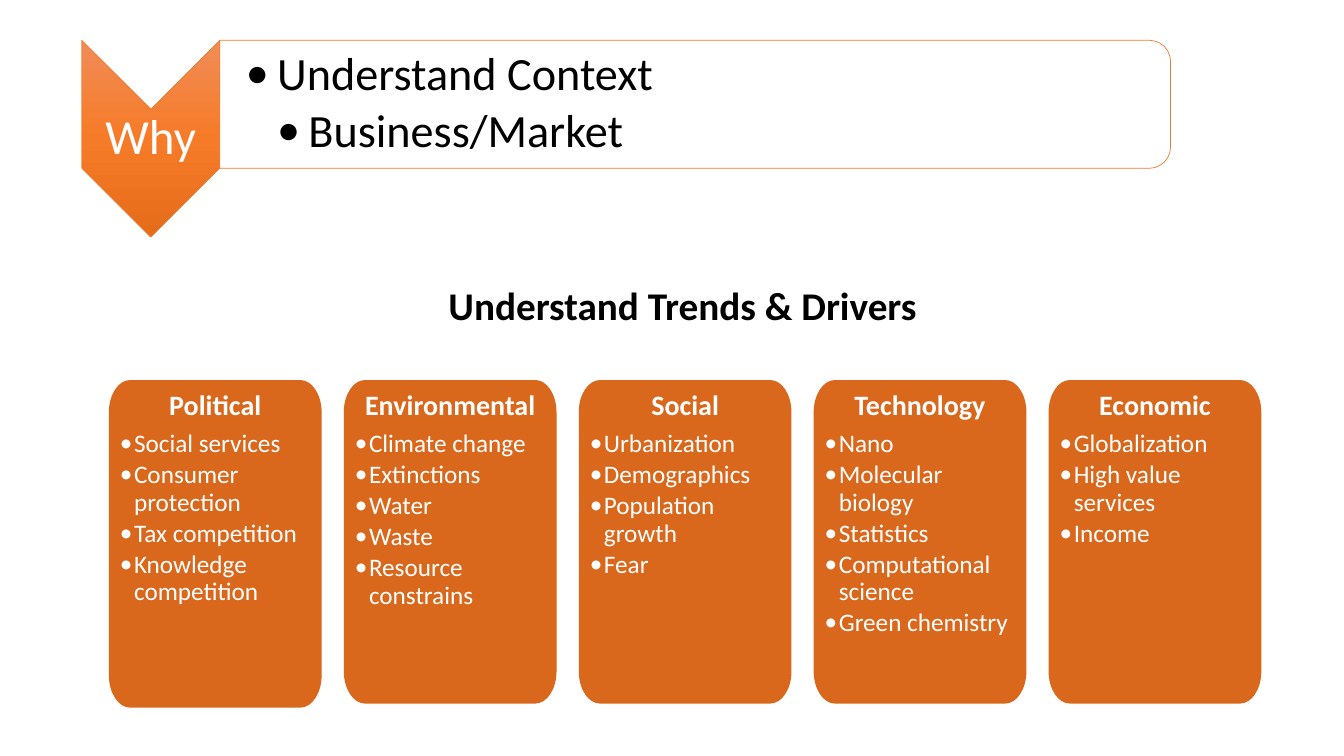
import pptx
import pptx.dml.color
import pptx.enum.shapes
import pptx.enum.text
import pptx.util
from lxml import etree
from pptx.oxml.ns import qn

STAGE = "Why"
CONTEXT = [("Understand Context", 0.31), ("Business/Market", 0.62)]
HEADLINE = "Understand Trends & Drivers"
DRIVERS = {
    "Political": ["Social services", "Consumer protection", "Tax competition",
                  "Knowledge competition"],
    "Environmental": ["Climate change", "Extinctions", "Water", "Waste",
                      "Resource constrains"],
    "Social": ["Urbanization", "Demographics", "Population growth", "Fear"],
    "Technology": ["Nano", "Molecular biology", "Statistics",
                   "Computational science", "Green chemistry"],
    "Economic": ["Globalization", "High value services", "Income"],
}
CHEVRON_STOPS = [(0, "F18C57"), (50, "F67B28"), (100, "E56C19")]
ORANGE, CARD, WHITE, BLACK = "ED7D31", "D9681C", "FFFFFF", "000000"

CARD_LEFT, CARD_TOP, CARD_WIDTH, CARD_STEP = 1.08, 3.77, 2.11, 2.33
CARD_HEIGHT, FIRST_CARD_HEIGHT = 3.21, 3.25
CORNER_X, CORNER_Y, ROUNDNESS = 0.21, 0.32, 0.55

Inches = pptx.util.Inches
Pt = pptx.util.Pt
Shape = pptx.enum.shapes.MSO_SHAPE
Align = pptx.enum.text.PP_ALIGN
Anchor = pptx.enum.text.MSO_ANCHOR


def paint(target, color):
    if hasattr(target, "solid"):
        target.solid()
        target = target.fore_color
    else:
        target = target.color
    target.rgb = pptx.dml.color.RGBColor.from_string(color)


def write(frame, text, size, color, bold=False, align=Align.LEFT, spacing=0.9,
          after=0.15, indent=0, hang=0):
    paragraph = frame.paragraphs[0]
    if paragraph.runs:
        paragraph = frame.add_paragraph()
    paragraph.alignment = align
    paragraph.line_spacing = spacing
    paragraph.space_after = Pt(round(size * after, 1))
    if hang:
        properties = paragraph._p.get_or_add_pPr()
        properties.set("marL", str(Inches(indent)))
        properties.set("indent", str(-Inches(hang)))
        etree.SubElement(properties, qn("a:buFont"), typeface="Calibri")
        etree.SubElement(properties, qn("a:buChar"), char="•")
    run = paragraph.add_run()
    run.text = text
    run.font.name = "Calibri"
    run.font.size = Pt(size)
    run.font.bold = bold
    paint(run.font, color)


def prepare(frame, insets, anchor=Anchor.TOP, wrap=True):
    frame.word_wrap = wrap
    frame.vertical_anchor = anchor
    (frame.margin_left, frame.margin_top,
     frame.margin_right, frame.margin_bottom) = map(Inches, insets)
    return frame


def add_text_area(slide, box, insets, **layout):
    area = slide.shapes.add_textbox(*map(Inches, box))
    return prepare(area.text_frame, insets, **layout)


def add_turned_shape(slide, kind, box):
    shape = slide.shapes.add_shape(kind, *map(Inches, box))
    shape.rotation = 90
    shape.shadow.inherit = False
    paint(shape.fill, WHITE)
    paint(shape.line, ORANGE)
    shape.line.width = Pt(0.5)
    return shape


def shade(shape, stops):
    shape.fill.gradient()
    gradient = shape._element.spPr.find(qn("a:gradFill"))
    gradient.set("rotWithShape", "0")
    for child in list(gradient):
        gradient.remove(child)
    stop_list = etree.SubElement(gradient, qn("a:gsLst"))
    for position, color in stops:
        stop = etree.SubElement(stop_list, qn("a:gs"), pos=str(position * 1000))
        etree.SubElement(stop, qn("a:srgbClr"), val=color)
    etree.SubElement(gradient, qn("a:lin"), ang="5400000", scaled="0")


def round_corner(segment, start, end, corner):
    curve = etree.Element(qn("a:cubicBezTo"))
    handles = [[round(p + (c - p) * ROUNDNESS) for p, c in zip(point, corner)]
               for point in (start, end)]
    for x, y in handles + [end]:
        etree.SubElement(curve, qn("a:pt"), x=str(x), y=str(y))
    segment.getparent().replace(segment, curve)


def add_rounded_card(slide, box):
    left, top, width, height = map(Inches, box)
    near_x, near_y = Inches(CORNER_X), Inches(CORNER_Y)
    far_x, far_y = width - near_x, height - near_y
    outline = [(0, near_y), (near_x, 0), (far_x, 0), (width, near_y),
               (width, far_y), (far_x, height), (near_x, height), (0, far_y)]
    corners = [(0, 0), (width, 0), (width, height), (0, height)]
    builder = slide.shapes.build_freeform(*outline[0])
    builder.add_line_segments(outline[1:] + outline[:1], close=True)
    card = builder.convert_to_shape(left, top)
    segments = list(card._element.spPr.iter(qn("a:lnTo")))
    for index, corner in enumerate(corners):
        start, end = outline[2 * index:2 * index + 2]
        round_corner(segments[2 * index], start, end, corner)
    return card


def add_card(slide, box, driver, trends):
    card = add_rounded_card(slide, box)
    card.shadow.inherit = False
    paint(card.fill, CARD)
    card.line.fill.background()
    frame = prepare(card.text_frame, [0.11] * 4)
    write(frame, driver, 20, WHITE, bold=True, align=Align.CENTER, after=0.35)
    for trend in trends:
        write(frame, trend, 18, WHITE, indent=0.14, hang=0.14)


def main():
    deck = pptx.Presentation()
    deck.slide_width, deck.slide_height = Inches(13.33), Inches(7.5)
    slide = deck.slides.add_slide(deck.slide_layouts[6])

    chevron = add_turned_shape(slide, Shape.CHEVRON, (0.52, 0.69, 1.95, 1.37))
    shade(chevron, CHEVRON_STOPS)
    stage = add_text_area(slide, (0.81, 1.08, 1.37, 0.59), [0.02] * 4,
                          anchor=Anchor.MIDDLE)
    write(stage, STAGE, 35, WHITE, align=Align.CENTER, after=0.35)

    add_turned_shape(slide, Shape.ROUND_2_SAME_RECTANGLE, (6.26, -3.68, 1.27, 9.43))
    context = add_text_area(slide, (2.18, 0.46, 9.37, 1.15),
                            (0.26, 0.02, 0.02, 0.02), anchor=Anchor.MIDDLE)
    for line, indent in CONTEXT:
        write(context, line, 33, BLACK, indent=indent, hang=0.31)

    for index, (driver, trends) in enumerate(DRIVERS.items()):
        height = CARD_HEIGHT if index else FIRST_CARD_HEIGHT
        box = (CARD_LEFT + index * CARD_STEP, CARD_TOP, CARD_WIDTH, height)
        add_card(slide, box, driver, trends)

    headline = add_text_area(slide, (4.35, 2.74, 4.9, 0.57),
                             (0.1, 0.05, 0.1, 0.05), wrap=False)
    write(headline, HEADLINE, 28, BLACK, bold=True, spacing=1.0, after=0)

    deck.save("out.pptx")


if __name__ == "__main__":
    main()
